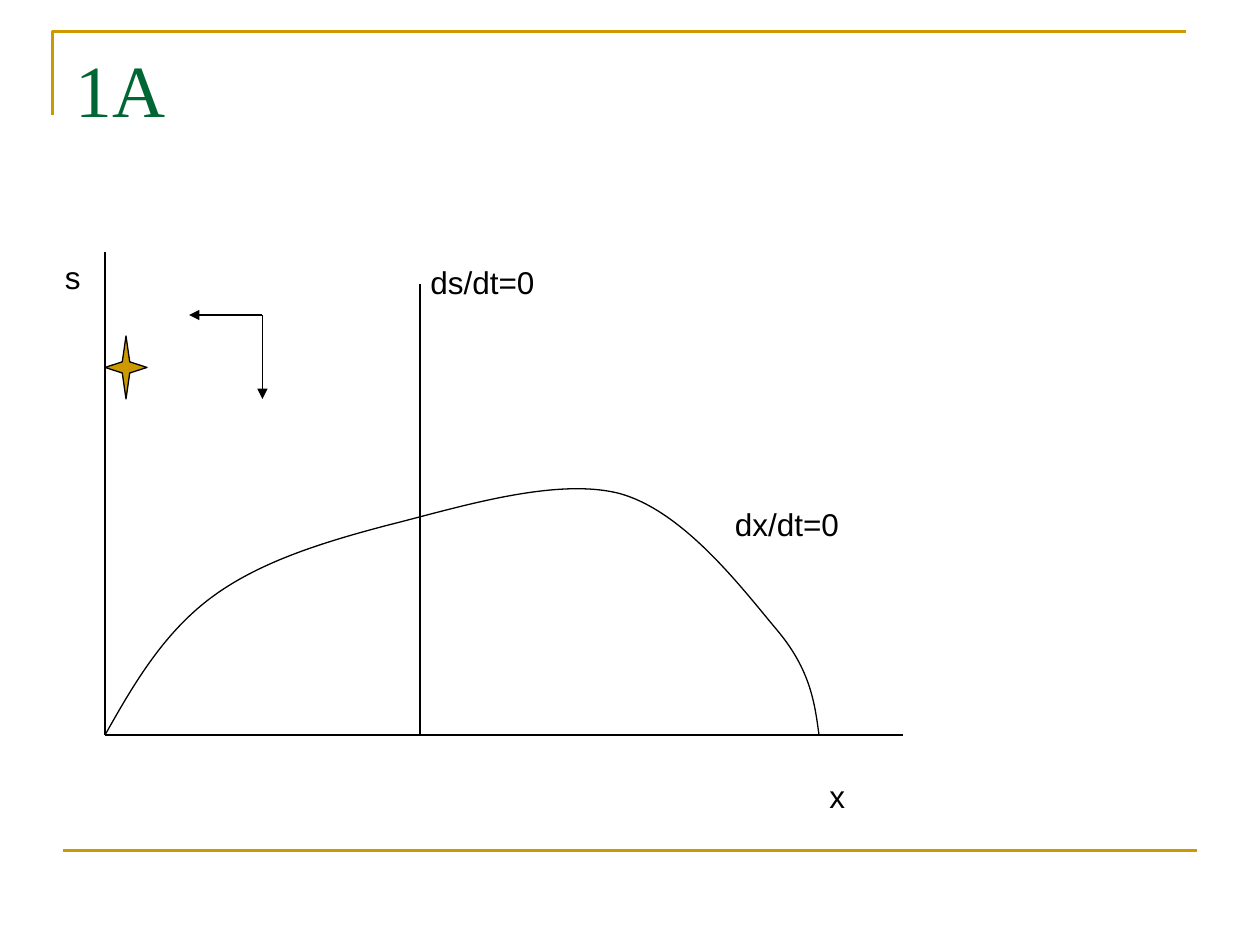
from lxml.etree import SubElement
from pptx import Presentation
from pptx.dml.color import RGBColor
from pptx.enum.shapes import MSO_CONNECTOR as CONN, MSO_SHAPE as SHAPE
from pptx.enum.text import MSO_ANCHOR as ANCHOR, MSO_AUTO_SIZE as AUTO
from pptx.oxml.ns import qn
from pptx.util import Pt

PX = 7620
BLACK = RGBColor(0x00, 0x00, 0x00)
GOLD = RGBColor(0xCC, 0x99, 0x00)
GREEN = RGBColor(0x00, 0x66, 0x33)


class Canvas:
    body_font, title_font = "Arial", "Times New Roman"
    thin, thick = 0.75, 1.5

    def __init__(self, prs):
        self.s = prs.slides.add_slide(prs.slide_layouts[6])

    def stroke(self, sp, color, width):
        sp.line.color.rgb = color
        sp.line.width = Pt(width)

    def line(self, x1, y1, x2, y2, color=BLACK, width=thin, arrow=False):
        ends = [v * PX for v in (x1, y1, x2, y2)]
        sp = self.s.shapes.add_connector(CONN.STRAIGHT, *ends)
        self.stroke(sp, color, width)
        if arrow:
            SubElement(sp.line._get_or_add_ln(), qn("a:tailEnd"), type="triangle")
        SubElement(sp._element.spPr, qn("a:effectLst"))

    def outline(self, points, color=BLACK, width=thin):
        builder = self.s.shapes.build_freeform(*points[0], scale=PX)
        builder.add_line_segments(points[1:], close=False)
        sp = builder.convert_to_shape()
        sp.shadow.inherit = False
        sp.fill.background()
        self.stroke(sp, color, width)
        return sp

    def curve(self, points):
        sp = self.outline(points)
        path = next(sp._element.iter(qn("a:path")))
        segments = path.findall(qn("a:lnTo"))
        for i in range(0, len(segments), 3):
            bezier = SubElement(path, qn("a:cubicBezTo"))
            for segment in segments[i:i + 3]:
                bezier.append(segment[0])
                path.remove(segment)

    def star(self, x, y, w, h):
        sp = self.s.shapes.add_shape(SHAPE.STAR_4_POINT, x * PX, y * PX, w * PX, h * PX)
        sp.adjustments[0] = 0.125
        sp.shadow.inherit = False
        sp.fill.solid()
        sp.fill.fore_color.rgb = GOLD
        self.stroke(sp, BLACK, self.thin)

    def text(self, text, x, y, w, h, size, font, color):
        tf = self.s.shapes.add_textbox(x * PX, y * PX, w * PX, h * PX).text_frame
        tf.text = text
        tf.vertical_anchor = ANCHOR.TOP
        f = tf.paragraphs[0].runs[0].font
        f.size, f.name, f.color.rgb = Pt(size), font, color
        return tf

    def title(self, text, x, y, w, h):
        self.text(text, x, y, w, h, 42, self.title_font, GREEN).word_wrap = True

    def label(self, text, x, y, w):
        tf = self.text(text, x, y, w, 48, 18, self.body_font, BLACK)
        tf.word_wrap = False
        tf.auto_size = AUTO.SHAPE_TO_FIT_TEXT


def main():
    prs = Presentation()
    prs.slide_width, prs.slide_height = 1200 * PX, 900 * PX
    c = Canvas(prs)

    c.outline([(50, 110), (50, 30), (1130, 30)], GOLD, c.thick)
    c.line(60, 810, 1140, 810, GOLD, c.thick)
    c.title("1A", 60, 36, 1080, 150)

    left, base = 100, 700
    c.line(left, 240, left, base)
    c.line(left, base, 860, base)
    c.line(400, base, 400, 270)
    c.curve([
        (left, base),
        (127, 652), (155, 604), (200, 570),
        (245, 536), (305, 517), (370, 500),
        (434, 484), (528, 454), (590, 470),
        (652, 487), (708, 562), (740, 600),
        (772, 638), (776, 670), (780, base),
    ])

    for end in ((180, 300), (250, 380)):
        c.line(250, 300, *end, arrow=True)
    c.star(left, 320, 40, 60)

    for label in (
        ("s", 50, 240, 40),
        ("x", 778, 734, 40),
        ("ds/dt=0", 398, 245, 124),
        ("dx/dt=0", 688, 475, 124),
    ):
        c.label(*label)

    prs.save("out.pptx")


if __name__ == "__main__":
    main()
